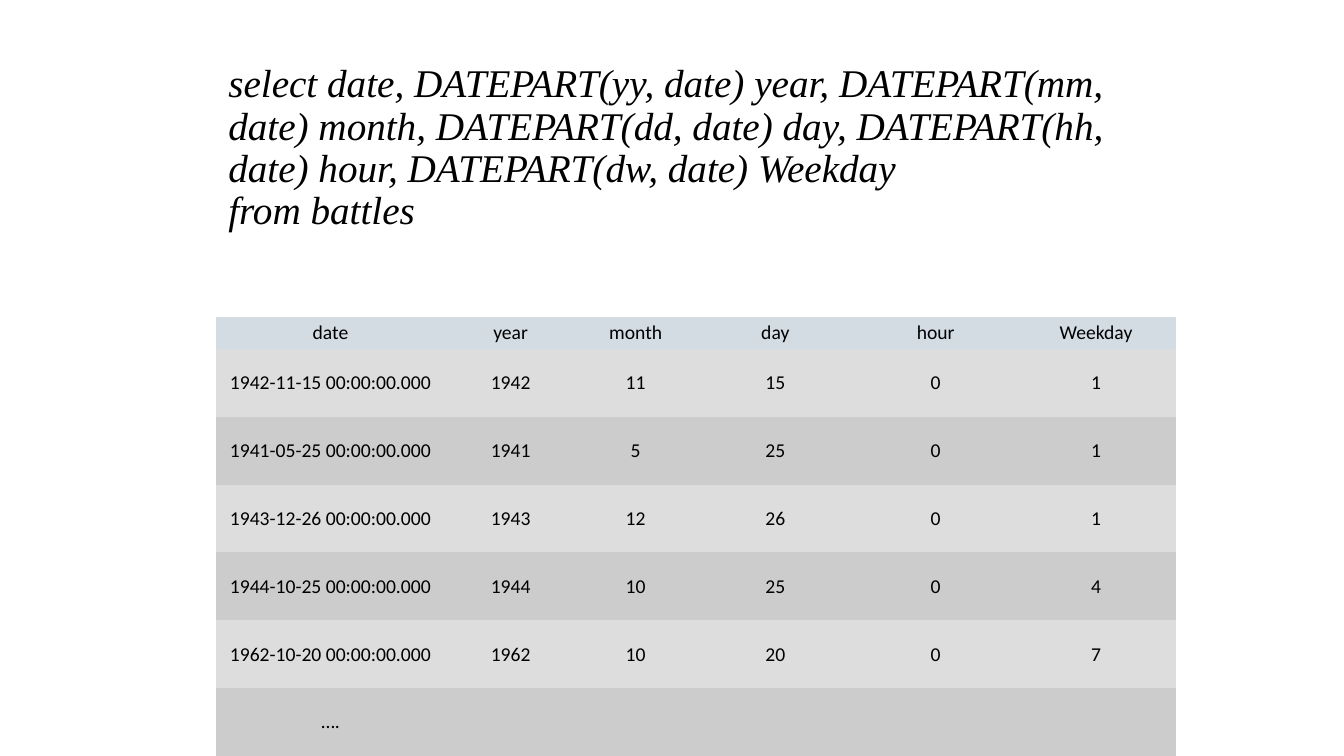
import pptx
import pptx.dml.color
import pptx.enum.text
import pptx.oxml.ns
import pptx.util

Cm = pptx.util.Cm
Pt = pptx.util.Pt
ALIGN = pptx.enum.text.PP_ALIGN
MIDDLE = pptx.enum.text.MSO_ANCHOR.MIDDLE

COLORS = {
    "text": "000000",
    "header": "D3DCE3",
    "odd_row": "DDDDDD",
    "even_row": "CCCCCC",
}
NO_STYLE_NO_GRID = "{2D5ABB26-0587-4C30-8999-92F81FD0307C}"

QUERY_LINES = [
    "select date, DATEPART(yy, date) year, DATEPART(mm, date) month, "
    "DATEPART(dd, date) day, DATEPART(hh, date) hour, DATEPART(dw, date) Weekday",
    "from battles",
]
BATTLE_ROWS = [
    ["date", "year", "month", "day", "hour", "Weekday"],
    ["1942-11-15 00:00:00.000", "1942", "11", "15", "0", "1"],
    ["1941-05-25 00:00:00.000", "1941", "5", "25", "0", "1"],
    ["1943-12-26 00:00:00.000", "1943", "12", "26", "0", "1"],
    ["1944-10-25 00:00:00.000", "1944", "10", "25", "0", "4"],
    ["1962-10-20 00:00:00.000", "1962", "10", "20", "0", "7"],
    ["….", "", "", "", "", ""],
]
COLUMN_WIDTHS = [5.78, 3.3, 3, 4.04, 4.04, 4.04]
HEADER_HEIGHT = 0.69
ROW_HEIGHT = 1.71


def rgb(name):
    return pptx.dml.color.RGBColor.from_string(COLORS[name])


def add_run(paragraph, text, font_name, size, italic=False):
    run = paragraph.add_run()
    run.text = text
    run.font.name = font_name
    run.font.size = Pt(size)
    run.font.italic = italic
    run.font.color.rgb = rgb("text")


def set_query_title(title):
    title.left, title.top = Cm(5.5), Cm(0.76)
    title.width, title.height = Cm(22.86), Cm(5.97)
    frame = title.text_frame
    frame.word_wrap = True
    frame.auto_size = pptx.enum.text.MSO_AUTO_SIZE.NONE
    frame.vertical_anchor = MIDDLE
    query = frame.paragraphs[0]
    query.alignment = ALIGN.LEFT
    query.line_spacing = 0.9
    for index, line in enumerate(QUERY_LINES):
        if index:
            query.add_line_break()
        add_run(query, line, "Times New Roman", 28, italic=True)


def fill_cell(cell, text, color):
    cell.fill.solid()
    cell.fill.fore_color.rgb = rgb(color)
    cell.vertical_anchor = MIDDLE
    cell.margin_left = cell.margin_right = Cm(0.1)
    cell.margin_top = cell.margin_bottom = Cm(0.1)
    paragraph = cell.text_frame.paragraphs[0]
    paragraph.alignment = ALIGN.CENTER
    if text:
        add_run(paragraph, text, "Calibri", 14)


def row_color(index):
    if index == 0:
        return "header"
    return "odd_row" if index % 2 else "even_row"


def add_battle_table(slide):
    heights = [HEADER_HEIGHT] + [ROW_HEIGHT] * (len(BATTLE_ROWS) - 1)
    battles = slide.shapes.add_table(
        len(BATTLE_ROWS), len(COLUMN_WIDTHS), Cm(5.44), Cm(7.99),
        Cm(sum(COLUMN_WIDTHS)), Cm(sum(heights))).table
    battles.horz_banding = False
    style = battles._tbl.tblPr.find(pptx.oxml.ns.qn("a:tableStyleId"))
    style.text = NO_STYLE_NO_GRID
    for column, width in zip(battles.columns, COLUMN_WIDTHS):
        column.width = Cm(width)
    for index, (row, height) in enumerate(zip(battles.rows, heights)):
        row.height = Cm(height)
        for cell, text in zip(row.cells, BATTLE_ROWS[index]):
            fill_cell(cell, text, row_color(index))


def main():
    deck = pptx.Presentation()
    deck.slide_width, deck.slide_height = Cm(33.87), Cm(19.05)
    slide = deck.slides.add_slide(deck.slide_layouts[5])
    set_query_title(slide.shapes.title)
    add_battle_table(slide)
    deck.save("out.pptx")


if __name__ == "__main__":
    main()
